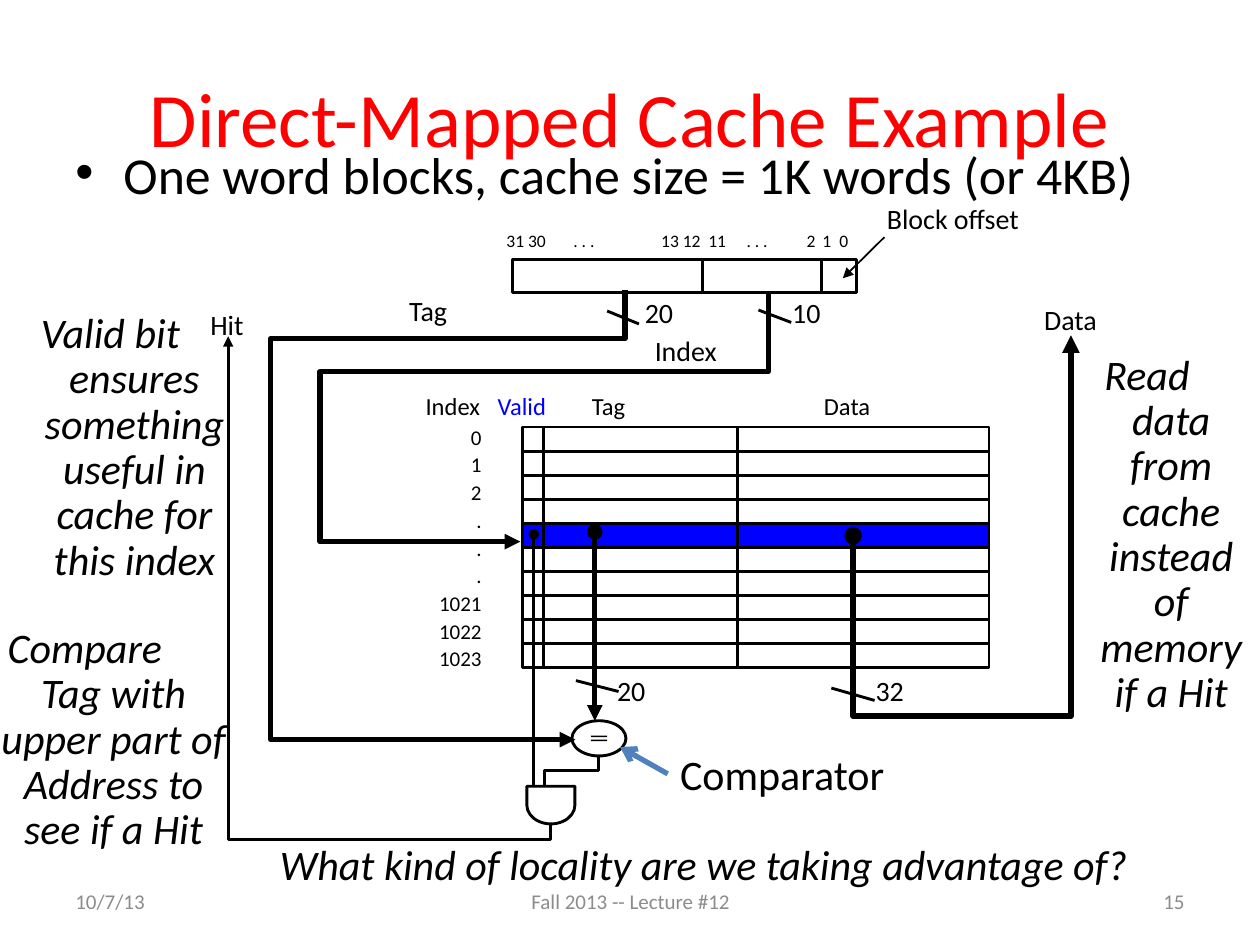
import dataclasses

import lxml.etree
import pptx
import pptx.dml.color
import pptx.enum.shapes
import pptx.enum.text
import pptx.oxml.ns
import pptx.util

Cm = pptx.util.Cm
Pt = pptx.util.Pt
qn = pptx.oxml.ns.qn
SHAPES = pptx.enum.shapes.MSO_SHAPE
ALIGN = pptx.enum.text.PP_ALIGN
ANCHOR = pptx.enum.text.MSO_ANCHOR
BLACK = pptx.dml.color.RGBColor(0x00, 0x00, 0x00)
RED = pptx.dml.color.RGBColor(0xFF, 0x00, 0x00)
BLUE = pptx.dml.color.RGBColor(0x00, 0x00, 0xFF)
STEEL = pptx.dml.color.RGBColor(0x4F, 0x81, 0xBD)
GRAY = pptx.dml.color.RGBColor(0x8C, 0x8C, 0x8C)
THIN = 1.63
BUS = 3


@dataclasses.dataclass
class Region:
    """An area of the page; its parts are placed in cm from its top left corner."""
    page: object
    left: float
    top: float
    width: float = 0
    height: float = 0

    def at(self, x, y):
        return Cm(self.left + x), Cm(self.top + y)

    def label(self, text, x, y, width, height, size=16, color=BLACK, align=ALIGN.LEFT,
              wrap=False, italic=False, spacing=None, anchor=ANCHOR.TOP):
        box = self.page.shapes.add_textbox(*self.at(x, y), Cm(width), Cm(height))
        frame = box.text_frame
        frame.text = text
        frame.word_wrap = wrap
        frame.vertical_anchor = anchor
        for para in frame.paragraphs:
            para.alignment = align
            para.line_spacing = spacing
            for span in para.runs:
                span.font.name = "Calibri"
                span.font.size = Pt(size)
                span.font.color.rgb = color
                span.font.italic = italic
        return frame.paragraphs[0]

    def shape(self, kind, x, y, width, height, fill=None, weight=THIN):
        shape = self.page.shapes.add_shape(kind, *self.at(x, y), Cm(width), Cm(height))
        if fill is None:
            shape.fill.background()
        else:
            shape.fill.solid()
            shape.fill.fore_color.rgb = fill
        if weight:
            style_line(shape, weight)
        else:
            shape.line.fill.background()
            shape.shadow.inherit = False
        return shape

    def route(self, points, weight=THIN, color=BLACK, head=None, tail=None):
        """Draw a straight connector for two points, an open outline for more."""
        corners = [self.at(*point) for point in points]
        if len(corners) == 2:
            shape = self.page.shapes.add_connector(
                pptx.enum.shapes.MSO_CONNECTOR.STRAIGHT, *corners[0], *corners[1])
        else:
            builder = self.page.shapes.build_freeform(*corners[0], scale=1.0)
            builder.add_line_segments(corners[1:], close=False)
            shape = builder.convert_to_shape()
            shape.fill.background()
        style_line(shape, weight, color, head, tail)


def style_line(shape, weight, color=BLACK, head=None, tail=None):
    shape.line.color.rgb = color
    shape.line.width = Pt(weight)
    properties = shape.element.spPr
    outline = properties.find(qn("a:ln"))
    for tag, end in (("a:headEnd", head), ("a:tailEnd", tail)):
        if end:
            lxml.etree.SubElement(outline, qn(tag), type=end)
    lxml.etree.SubElement(properties, qn("a:effectLst"))


def set_indent(para, hanging=0.97):
    properties = para._p.get_or_add_pPr()
    properties.set("marL", str(Cm(hanging)))
    properties.set("indent", str(-Cm(hanging)))
    return properties


def add_heading(region):
    para = region.label("One word blocks, cache size = 1K words (or 4KB)", 0, 2.44, 22.43, 1.88,
                        size=29.6, wrap=True, spacing=0.6)
    properties = set_indent(para)
    lxml.etree.SubElement(properties, qn("a:buFont"), typeface="Arial")
    lxml.etree.SubElement(properties, qn("a:buChar"), char="•")
    region.label("Direct-Mapped Cache Example", 0, 0, region.width, region.height, size=44,
                 color=RED, align=ALIGN.CENTER, wrap=True, anchor=ANCHOR.MIDDLE)


def add_note(region, text):
    para = region.label(text, 0, 0, region.width, region.height, size=24, align=ALIGN.CENTER,
                        wrap=True, italic=True, spacing=0.9)
    set_indent(para)


def add_address(region):
    region.shape(SHAPES.RECTANGLE, 0, 0, region.width, region.height)
    for x in (3.82, 6.22):
        region.route([(x, 0), (x, region.height)])
    para = region.label("31 30\t. . .\t13 12\t11\t. . .\t2\t1\t0", -0.38, -0.71, 7.87, 0.69,
                        size=10, wrap=True)
    stops = lxml.etree.SubElement(para._p.get_or_add_pPr(), qn("a:tabLst"))
    for stop in (1.35, 3.12, 4.07, 4.84, 6.05, 6.37, 6.71):
        lxml.etree.SubElement(stops, qn("a:tab"), pos=str(Cm(stop)), algn="l")
    region.label("Block offset", 7.29, -1.29, 3.18, 0.94, wrap=True)
    region.route([(7.49, -0.45), (6.65, 0.38)], 1, tail="triangle")


def add_cache(region):
    row = region.height / 10
    region.shape(SHAPES.RECTANGLE, 0, 4 * row, region.width, row, BLUE)
    region.shape(SHAPES.RECTANGLE, 0, 0, region.width, region.height)
    for index in range(1, 10):
        region.route([(0, index * row), (region.width, index * row)])
    for x in (0.41, 4.32):
        region.route([(x, 0), (x, region.height)])
    for text, x, width, color in (("Index", -2.21, 1.75, BLACK), ("Valid", -0.76, 1.5, BLUE),
                                  ("Tag", 1.14, 1.35, BLACK), ("Data", 5.82, 1.55, BLACK)):
        region.label(text, x, -0.86, width, 0.84, size=14, color=color)
    region.label("\n".join(["0", "1", "2", ".", ".", ".", "1021", "1022", "1023"]),
                 -2.03, -0.23, 1.45, 5.31, size=12, align=ALIGN.RIGHT, spacing=1.1)


def add_bus(region, points, tick, bits, bits_at, weight=BUS, head=None, names=()):
    """Draw a thick path, the slash across it with its bit count, and its names."""
    region.route(points, weight, head=head, tail="triangle")
    region.route(tick)
    region.label(bits, *bits_at, 1.14, 0.94)
    for name, x, y, width in names:
        region.label(name, x, y, width, 0.94)


def add_comparator(region):
    region.shape(SHAPES.OVAL, 0, 0, region.width, region.height)
    for y in (0.3, 0.38):
        region.shape(SHAPES.RECTANGLE, 0.38, y, 0.33, 0.03, BLACK, weight=0)
    region.label("Comparator", 1.93, 0.43, 4.67, 1.27, size=24)
    region.route([(1.93, 1.07), (0.97, 0.53)], BUS, STEEL, tail="arrow")


def add_hit_logic(region):
    wide, tall = region.width, region.height
    gate = region.shape(SHAPES.FLOWCHART_DELAY, (wide - tall) / 2, (tall - wide) / 2, tall, wide)
    gate.rotation = 90
    region.route([(0.14, -5.08), (0.14, 0)], head="oval")
    region.route([(1.45, -0.61), (1.45, -0.31), (0.35, -0.31), (0.35, 0)])
    region.route([(wide / 2, tall), (wide / 2, 1.07), (-6.02, 1.07), (-6.02, -9.07)],
                 tail="triangle")
    region.label("Hit", -6.63, -9.78, 1.19, 0.94)


def add_footer(region):
    for text, x, width, align in (("10/7/13", 0, 5.92, ALIGN.LEFT),
                                  ("Fall 2013 -- Lecture #12", 7.42, 8.05, ALIGN.CENTER),
                                  ("15", 16.94, 5.92, ALIGN.RIGHT)):
        region.label(text, x, 0, width, region.height, size=12, color=GRAY, align=align,
                     wrap=True, anchor=ANCHOR.MIDDLE)


def main():
    deck = pptx.Presentation()
    deck.slide_width, deck.slide_height = Cm(25.4), Cm(19.05)
    page = deck.slides.add_slide(deck.slide_layouts[6])

    add_heading(Region(page, 1.27, 0.76, 22.86, 3.18))
    add_address(Region(page, 10.34, 5.23, 6.92, 0.66))
    add_cache(Region(page, 10.54, 8.61, 9.4, 4.85))
    add_comparator(Region(page, 11.53, 14.53, 1.09, 0.71))
    add_bus(Region(page, 12.6, 5.84),
            [(0, 0), (0, 0.99), (-7.14, 0.99), (-7.14, 9.07), (-1, 9.07)],
            [(-0.36, 0.43), (0.28, 0.69)], "20", (0.15, 0), names=[("Tag", -4.6, -0.05, 1.47)])
    add_bus(Region(page, 15.49, 5.89),
            [(0, 0), (0, 1.6), (-9.04, 1.6), (-9.04, 5.03), (-5, 5.03)],
            [(-0.2, 0.36), (0.46, 0.61)], "10", (0.23, -0.05),
            names=[("Index", -2.54, 0.71, 1.88)])
    add_bus(Region(page, 11.99, 10.72), [(0, 0), (0, 3.81)],
            [(-0.38, 3), (0.48, 3.22)], "20", (0.2, 2.74), head="oval")
    add_bus(Region(page, 17.2, 10.8), [(0, 0), (0, 3.63), (4.39, 3.63), (4.39, -4.04)],
            [(-0.44, 3.07), (0.43, 3.32)], "32", (0.2, 2.66), 3.38, "oval",
            names=[("Data", 3.6, -4.83, 1.7)])
    add_hit_logic(Region(page, 10.62, 15.85, 0.97, 0.76))
    add_note(Region(page, 2.97, 16.89, 22.43, 1.27),
             "What kind of locality are we taking advantage of?")
    add_note(Region(page, -0.53, 6.17, 5.51, 1.27),
             "Valid bit ensures something useful in cache for this index")
    add_note(Region(page, -1.27, 12.52, 6.15, 5.69),
             "Compare \vTag with upper part of Address to see if a Hit")
    add_note(Region(page, 20.85, 7.01, 4.55, 1.27),
             "Read\vdata from cache instead of memory if a Hit")
    add_footer(Region(page, 1.27, 17.65, 22.86, 1.02))
    deck.save("out.pptx")


if __name__ == "__main__":
    main()
